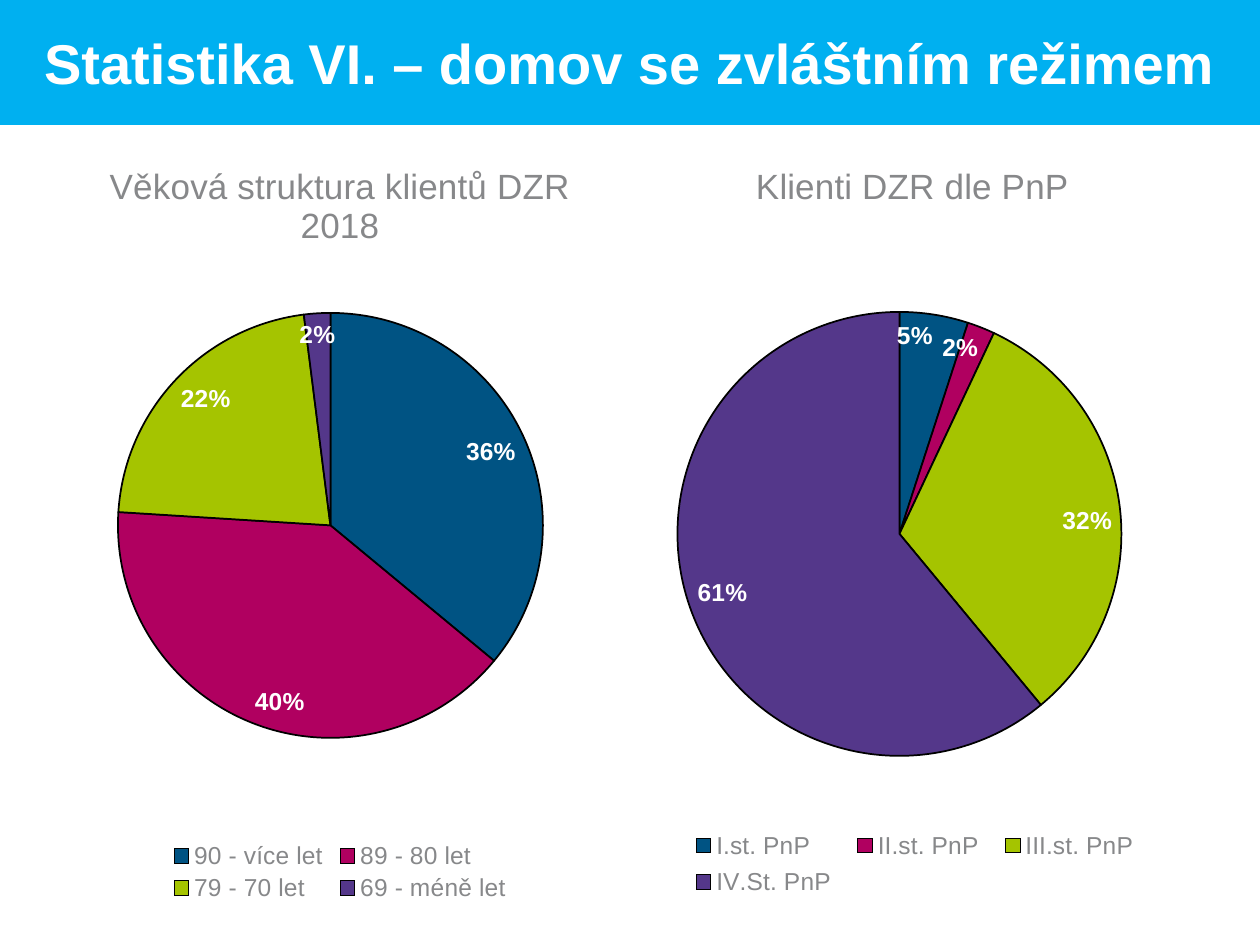
from lxml import etree
from pptx import Presentation
from pptx.chart.data import CategoryChartData
from pptx.dml.color import RGBColor
from pptx.enum.chart import XL_CHART_TYPE, XL_LABEL_POSITION, XL_LEGEND_POSITION
from pptx.enum.shapes import MSO_SHAPE
from pptx.enum.text import MSO_ANCHOR, PP_ALIGN
from pptx.oxml.ns import qn
from pptx.util import Emu, Pt

PIE = XL_CHART_TYPE.PIE
INSIDE_END = XL_LABEL_POSITION.INSIDE_END
BOTTOM = XL_LEGEND_POSITION.BOTTOM
RECTANGLE = MSO_SHAPE.RECTANGLE
MIDDLE = MSO_ANCHOR.MIDDLE
CENTER = PP_ALIGN.CENTER

EMU_PER_PX = 914400 / 126
FONT = "Arial"
COLORS = {
    "banner": "00B0F0",
    "white": "FFFFFF",
    "black": "000000",
    "gray": "87888A",
    "blue": "005383",
    "magenta": "B00060",
    "green": "A5C400",
    "purple": "54378A",
}
SLICES = ["blue", "magenta", "green", "purple"]


def px(n):
    return Emu(round(n * EMU_PER_PX))


def color(name):
    return RGBColor.from_string(COLORS[name])


def style_font(font, size, name, bold=False):
    font.name = FONT
    font.size = Pt(size)
    font.bold = bold
    font.color.rgb = color(name)


def set_layout(parent, index, box, part, inner=False):
    layout = parent.find(qn("c:layout"))
    if layout is None:
        layout = etree.Element(qn("c:layout"))
        parent.insert(index, layout)
    manual = etree.SubElement(layout, qn("c:manualLayout"))
    x, y, w, h = part
    settings = [("layoutTarget", "inner")] if inner else []
    settings += [("xMode", "edge"), ("yMode", "edge")]
    settings += [("x", x / box[2]), ("y", y / box[3]), ("w", w / box[2]), ("h", h / box[3])]
    for tag, value in settings:
        etree.SubElement(manual, qn(f"c:{tag}")).set("val", str(value))


def add_banner(s, box, text):
    sp = s.shapes.add_shape(RECTANGLE, *map(px, box))
    sp.shadow.inherit = False
    sp.fill.solid()
    sp.fill.fore_color.rgb = color("banner")
    sp.line.fill.background()
    tf = sp.text_frame
    tf.word_wrap = True
    tf.vertical_anchor = MIDDLE
    p = tf.paragraphs[0]
    p.text = text
    p.alignment = CENTER
    style_font(p.font, 32, "white", True)


def add_pie(s, box, title, values, plot_box, legend_box):
    data = CategoryChartData()
    data.categories = list(values)
    data.add_series("Series 1", list(values.values()))
    chart = s.shapes.add_chart(PIE, *map(px, box), data).chart
    chart.font.name = "Calibri"
    chart.font.size = Pt(18)
    chart.font.color.rgb = color("black")

    chart.has_title = True
    chart.chart_title.include_in_layout = False
    p = chart.chart_title.text_frame.paragraphs[0]
    p.text = title
    style_font(p.font, 20, "gray")

    chart.has_legend = True
    legend = chart.legend
    legend.position = BOTTOM
    legend.include_in_layout = False
    style_font(legend.font, 14, "gray")

    plot = chart.plots[0]
    plot.vary_by_categories = True
    plot.has_data_labels = True
    labels = plot.data_labels
    labels.show_value = False
    labels.show_percentage = True
    labels.number_format = "0%"
    labels.number_format_is_linked = False
    labels.position = INSIDE_END
    style_font(labels.font, 14, "white", True)

    for i, name in enumerate(SLICES):
        fmt = plot.series[0].points[i].format
        fmt.fill.solid()
        fmt.fill.fore_color.rgb = color(name)
        fmt.line.color.rgb = color("black")
        fmt.line.width = Pt(1)

    root = chart.element
    set_layout(root.find(".//" + qn("c:plotArea")), 0, box, plot_box, True)
    set_layout(root.find(".//" + qn("c:legend")), 1, box, legend_box)


def main():
    prs = Presentation()
    prs.slide_width = px(1260)
    prs.slide_height = px(945)
    s = prs.slides.add_slide(prs.slide_layouts[6])
    add_banner(s, (0, 0, 1260, 125), "Statistika VI. – domov se zvláštním režimem")
    add_pie(
        s, (25, 135, 630, 774), "Věková struktura klientů DZR 2018",
        {"90 - více let": 36, "89 - 80 let": 40, "79 - 70 let": 22, "69 - méně let": 2},
        (93, 162, 425, 457), (140, 703, 350, 68),
    )
    add_pie(
        s, (610, 135, 605, 794), "Klienti DZR dle PnP",
        {"I.st. PnP": 5, "II.st. PnP": 2, "III.st. PnP": 32, "IV.St. PnP": 61},
        (63, 177, 453, 444), (68, 688, 474, 82),
    )
    prs.save("out.pptx")


if __name__ == "__main__":
    main()
